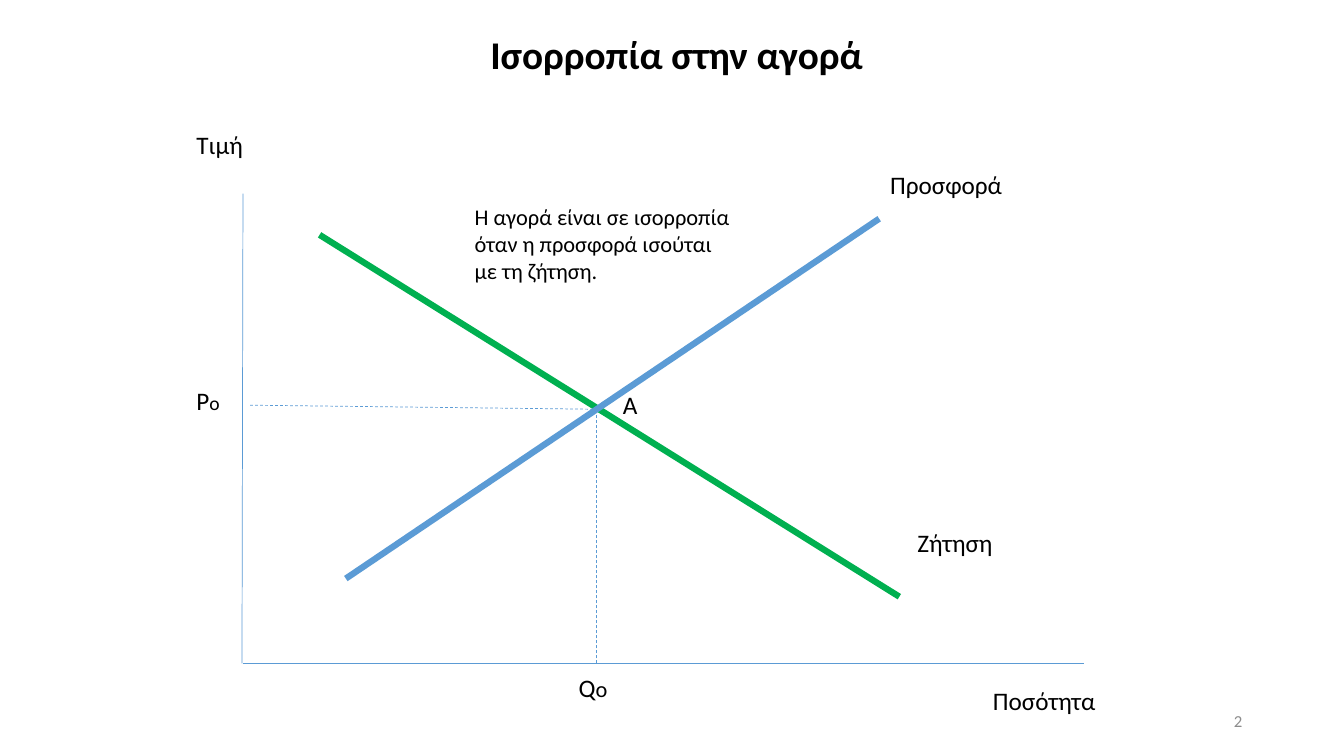
import lxml.etree
import pptx
import pptx.dml.color
import pptx.enum.dml
import pptx.enum.shapes
import pptx.enum.text
import pptx.oxml.ns
import pptx.util

EMU_PER_PX = 9144  # 100 px to the inch
ALIGN = pptx.enum.text.PP_ALIGN
ANCHOR = pptx.enum.text.MSO_ANCHOR


def px(length):
    return pptx.util.Emu(length * EMU_PER_PX)


def color(hex_string):
    return pptx.dml.color.RGBColor.from_string(hex_string)


class MarketSlide:
    font = "Calibri"
    black, grey, blue, green = "000000", "8C8C8C", "5B9BD5", "00B050"

    def __init__(self, presentation):
        self.slide = presentation.slides.add_slide(presentation.slide_layouts[6])

    def line(self, start, end, hex_color, width, dashed=False):
        connector = self.slide.shapes.add_connector(
            pptx.enum.shapes.MSO_CONNECTOR.STRAIGHT,
            *[px(value) for value in start + end])
        connector.line.color.rgb = color(hex_color)
        connector.line.width = pptx.util.Pt(width)
        if dashed:
            connector.line.dash_style = pptx.enum.dml.MSO_LINE.DASH
        lxml.etree.SubElement(connector._element.spPr,
                              pptx.oxml.ns.qn("a:effectLst"))

    def text(self, box, paragraphs, align=ALIGN.LEFT, anchor=ANCHOR.TOP,
             wrap=True, hex_color=black, bold=False, spacing=1.0):
        """Each paragraph is a list of (words, point size) runs."""
        shape = self.slide.shapes.add_textbox(*[px(value) for value in box])
        frame = shape.text_frame
        frame.word_wrap = wrap
        frame.vertical_anchor = anchor
        for index, runs in enumerate(paragraphs):
            paragraph = frame.add_paragraph() if index else frame.paragraphs[0]
            paragraph.alignment = align
            paragraph.line_spacing = spacing
            for words, size in runs:
                run = paragraph.add_run()
                run.text = words
                run.font.name = self.font
                run.font.size = pptx.util.Pt(size)
                run.font.bold = bold
                run.font.color.rgb = color(hex_color)


def main():
    presentation = pptx.Presentation()
    presentation.slide_width = px(1333)
    presentation.slide_height = px(750)
    market = MarketSlide(presentation)

    # Title and slide number
    market.text((217, 19, 908, 75), [[("Ισορροπία στην αγορά", 28)]],
                ALIGN.CENTER, ANCHOR.MIDDLE, bold=True, spacing=0.9)
    market.text((942, 695, 300, 40), [[("2", 12)]],
                ALIGN.RIGHT, ANCHOR.MIDDLE, hex_color=market.grey)

    # Axes
    market.line((241, 192), (240, 658), market.blue, 0.5)
    market.line((1075, 658), (241, 658), market.blue, 0.5)

    # Demand and supply
    market.line((317, 233), (892, 592), market.green, 4.5)
    market.line((343, 574), (872, 217), market.blue, 4.5)

    # Guides to the equilibrium point
    market.line((248, 402), (590, 406), market.blue, 0.5, dashed=True)
    market.line((592, 658), (592, 409), market.blue, 0.5, dashed=True)

    # Names of axes and curves
    for left, top, width, name in [(185, 123, 112, "Τιμή"),
                                   (975, 675, 156, "Ποσότητα"),
                                   (873, 163, 185, "Προσφορά"),
                                   (900, 518, 185, "Ζήτηση")]:
        market.text((left, top, width, 40), [[(name, 18)]])

    # Equilibrium price, quantity and point
    for left, top, width, runs in [(185, 377, 44, [("P", 18), ("o", 14)]),
                                   (564, 662, 49, [("Q", 18), ("o", 16)]),
                                   (608, 381, 35, [("Α", 18)])]:
        market.text((left, top, width, 40), [runs], wrap=False)

    # Explanation
    explanation = ["Η αγορά είναι σε ισορροπία", "όταν η προσφορά ισούται",
                   "με τη ζήτηση."]
    market.text((461, 197, 276, 94), [[(words, 16)] for words in explanation],
                ALIGN.JUSTIFY, wrap=False)

    presentation.save("out.pptx")


if __name__ == "__main__":
    main()
